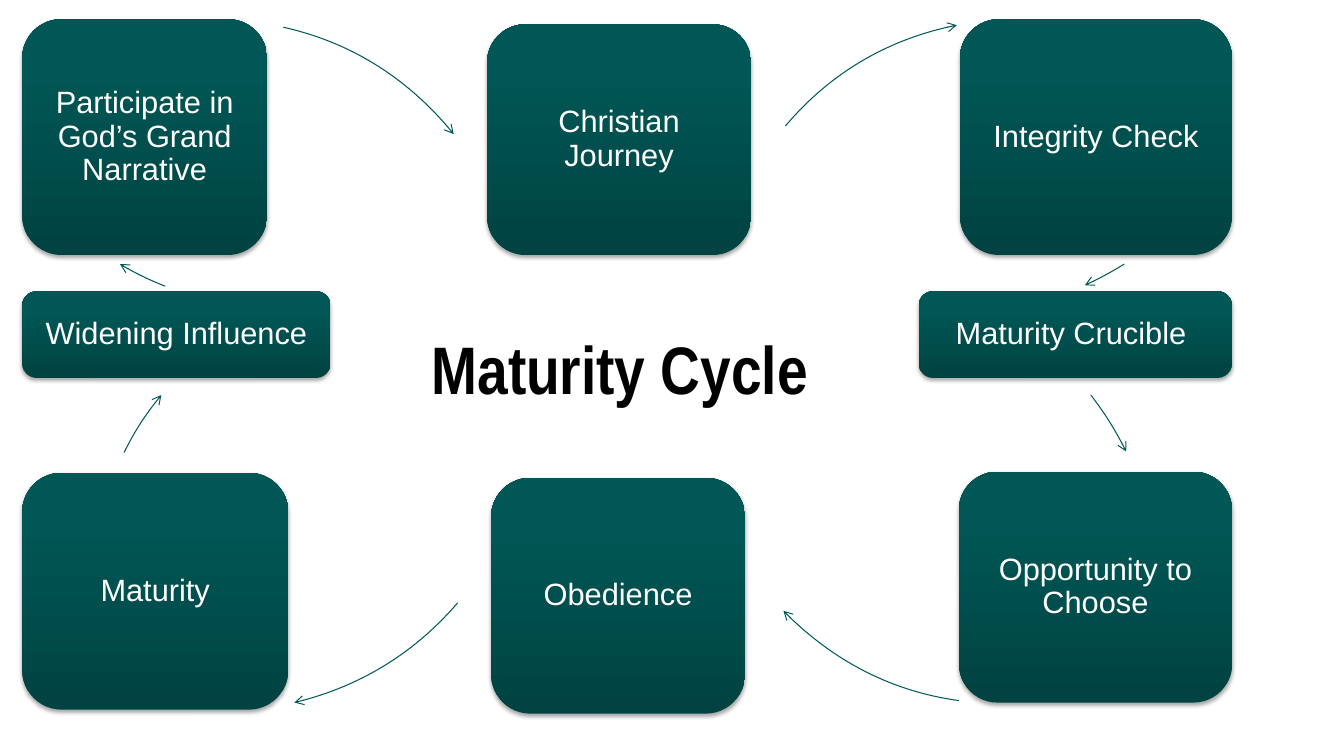
from copy import deepcopy

from lxml import etree
from pptx import Presentation
from pptx.dml.color import RGBColor
from pptx.enum.shapes import MSO_SHAPE
from pptx.enum.text import MSO_ANCHOR, MSO_AUTO_SIZE, PP_ALIGN
from pptx.oxml.ns import qn
from pptx.util import Inches, Pt

ROUNDED = MSO_SHAPE.ROUNDED_RECTANGLE
CENTER, LEFT = PP_ALIGN.CENTER, PP_ALIGN.LEFT
MIDDLE, TOP = MSO_ANCHOR.MIDDLE, MSO_ANCHOR.TOP
FIT_SHAPE = MSO_AUTO_SIZE.SHAPE_TO_FIT_TEXT

COLORS = {"dark": "004342", "teal": "005755", "light": "005856",
          "arrow": "005A58", "text": "FFFFFF", "title": "000000", "shadow": "000000"}
GRADIENT = [(0, "dark"), (0.8, "teal"), (1, "light")]
CIRCLE_SIZE = 5.98

STAGES = [
    ("Christian Journey", 4.83, 0.24, 2.62, 2.29),
    ("Integrity Check", 9.52, 0.19, 2.7, 2.34),
    ("Maturity Crucible ", 9.11, 2.89, 3.11, 0.86),
    ("Opportunity to Choose", 9.51, 4.68, 2.71, 2.29),
    ("Obedience", 4.87, 4.74, 2.52, 2.34),
    ("Maturity", 0.22, 4.69, 2.64, 2.35),
    ("Widening Influence", 0.22, 2.89, 3.06, 0.86),
    ("Participate in God’s Grand Narrative", 0.22, 0.19, 2.43, 2.34),
]
ARROWS = [
    (7.08, 0.19, [(7.79, 1.25), (8.23, 0.73), (8.83, 0.38), (9.49, 0.25)]),
    (6.54, -2.89, [(11.15, 2.62), (11.02, 2.7), (10.89, 2.77), (10.76, 2.83)]),
    (5.48, 2.78, [(10.82, 3.92), (10.95, 4.09), (11.07, 4.28), (11.17, 4.48)]),
    (6.94, 0.99, [(9.51, 6.95), (8.85, 6.86), (8.24, 6.54), (7.77, 6.06)]),
    (-0.75, 1.06, [(4.54, 5.98), (4.12, 6.47), (3.55, 6.82), (2.92, 6.97)]),
    (0.92, 2.83, [(1.23, 4.49), (1.33, 4.29), (1.45, 4.1), (1.6, 3.92)]),
    (-0.31, -2.96, [(1.64, 2.84), (1.49, 2.78), (1.34, 2.71), (1.19, 2.62)]),
    (-0.85, 0.19, [(2.81, 0.27), (3.48, 0.42), (4.07, 0.8), (4.5, 1.33)]),
]


def color(name):
    return RGBColor.from_string(COLORS[name])


class CycleSlide:
    """Draws the styled elements of a cycle diagram on one slide."""

    def __init__(self, slide):
        self.slide = slide

    def set_font(self, paragraph, name, size, color_name, bold=False):
        font = paragraph.font
        font.name, font.size, font.bold = name, Pt(size), bold
        font.color.rgb = color(color_name)

    def place(self, shape, left, top, width, height):
        shape.left, shape.top = Inches(left), Inches(top)
        shape.width, shape.height = Inches(width), Inches(height)

    def add_title(self, text, left, top, width, height):
        title = self.slide.shapes.title
        self.place(title, left, top, width, height)
        frame = title.text_frame
        frame.text = text
        frame.word_wrap = False
        frame.auto_size = FIT_SHAPE
        frame.vertical_anchor = TOP
        paragraph = frame.paragraphs[0]
        paragraph.alignment = LEFT
        paragraph.space_after = Pt(6.7)
        self.set_font(paragraph, "Arial Narrow", 48, "title", bold=True)

    def fill_gradient(self, shape):
        fill = shape.fill
        fill.gradient()
        fill.gradient_angle = 90
        stop_list = shape._element.spPr.find(".//" + qn("a:gsLst"))
        stop_list.append(deepcopy(stop_list[-1]))
        for stop, (position, name) in zip(fill.gradient_stops, GRADIENT):
            stop.position = position
            stop.color.rgb = color(name)

    def add_shadow(self, shape):
        shape.shadow.inherit = False
        effects = shape._element.spPr.find(qn("a:effectLst"))
        shadow = etree.SubElement(effects, qn("a:outerShdw"), blurRad=str(Pt(3.1)),
                                  dist=str(Pt(1.8)), dir="5400000", rotWithShape="0")
        shade = etree.SubElement(shadow, qn("a:srgbClr"), val=COLORS["shadow"])
        etree.SubElement(shade, qn("a:alpha"), val="35000")

    def add_stage(self, text, left, top, width, height):
        shape = self.slide.shapes.add_shape(
            ROUNDED, Inches(left), Inches(top), Inches(width), Inches(height))
        self.fill_gradient(shape)
        shape.line.fill.background()
        self.add_shadow(shape)
        frame = shape.text_frame
        frame.text = text
        frame.word_wrap = True
        frame.vertical_anchor = MIDDLE
        frame.margin_left = frame.margin_right = Inches(0.09)
        frame.margin_top = frame.margin_bottom = Inches(0.09)
        paragraph = frame.paragraphs[0]
        paragraph.alignment = CENTER
        paragraph.line_spacing = 0.9
        paragraph.space_after = Pt(7.7)
        self.set_font(paragraph, "Arial", 22, "text")

    def add_curved_arrow(self, circle_left, circle_top, points):
        start, *others = [(Inches(x), Inches(y)) for x, y in points]
        builder = self.slide.shapes.build_freeform(*start)
        builder.add_line_segments(others, close=False)
        shape = builder.convert_to_shape()
        outline = shape._element.spPr.find(".//" + qn("a:path"))
        curve = etree.SubElement(outline, qn("a:cubicBezTo"))
        for segment in outline.findall(qn("a:lnTo")):
            curve.append(segment[0])
            outline.remove(segment)
        for point, (x, y) in zip(outline.iter(qn("a:pt")), points):
            point.set("x", str(Inches(x - circle_left)))
            point.set("y", str(Inches(y - circle_top)))
        for side in ("w", "h"):
            outline.set(side, str(Inches(CIRCLE_SIZE)))
        self.place(shape, circle_left, circle_top, CIRCLE_SIZE, CIRCLE_SIZE)
        shape.shadow.inherit = False
        shape.fill.background()
        shape.line.color.rgb = color("arrow")
        shape.line.width = Pt(0.75)
        line = shape._element.spPr.find(qn("a:ln"))
        etree.SubElement(line, qn("a:tailEnd"), type="arrow")


def main():
    presentation = Presentation()
    presentation.slide_width = Inches(13.33)
    presentation.slide_height = Inches(7.5)
    title_only = presentation.slide_layouts[5]
    cycle = CycleSlide(presentation.slides.add_slide(title_only))
    for stage, arrow in zip(STAGES, ARROWS):
        cycle.add_stage(*stage)
        cycle.add_curved_arrow(*arrow)
    cycle.add_title("Maturity Cycle", 4.18, 3.2, 3.97, 0.91)
    presentation.save("out.pptx")


if __name__ == "__main__":
    main()
